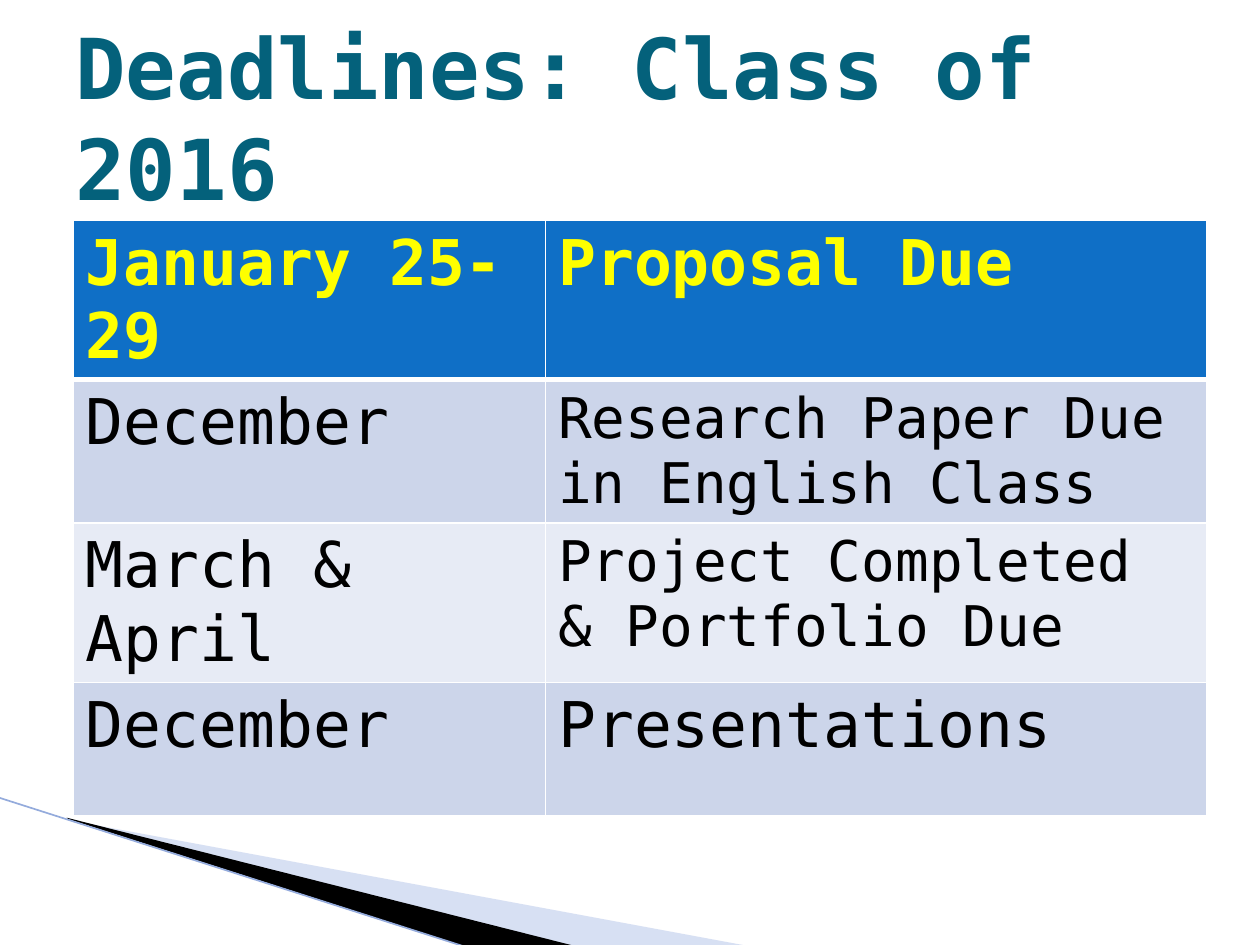
from typing import NamedTuple

from lxml import etree
from pptx import Presentation
from pptx import util as u
from pptx.dml.color import RGBColor
from pptx.enum import shapes, text
from pptx.oxml import ns

FONT = "DejaVu Sans Mono"
WHITE = RGBColor(0xFF, 0xFF, 0xFF)
BLACK = RGBColor(0x00, 0x00, 0x00)
YELLOW = RGBColor(0xFF, 0xFF, 0x00)
TEAL = RGBColor(0x04, 0x61, 0x7B)
HEADER_BLUE = RGBColor(0x0F, 0x6F, 0xC6)
BAND_DARK = RGBColor(0xCC, 0xD5, 0xEA)
BAND_LIGHT = RGBColor(0xE7, 0xEB, 0xF5)
WEDGE_BLUE = RGBColor(0x9D, 0xB2, 0xE1)
LINE_BLUE = RGBColor(0x94, 0xAB, 0xDC)


class Wedge(NamedTuple):
    points: list[tuple[float, float]]
    color: RGBColor
    opacity: int


class Deadline(NamedTuple):
    date: str
    task: str
    task_size: int = 36


WEDGES = [
    Wedge([(0.55, 6.51), (5.95, 7.51), (4.56, 7.51), (0.55, 6.5)], WEDGE_BLUE, 40),
    Wedge([(0.53, 6.49), (4.57, 7.51), (3.72, 7.52), (0.54, 6.5)], BLACK, 100),
]
DEADLINES = [
    Deadline("January 25-29", "Proposal Due"),
    Deadline("December", "Research Paper Due in English Class", 32),
    Deadline("March & April", "Project Completed & Portfolio Due", 32),
    Deadline("December", "Presentations"),
]
COLUMN_WIDTHS = (3.75, 5.25)
ROW_HEIGHT = 1.06


def style_text(text_frame, size: int, color: RGBColor, bold: bool) -> None:
    for run in text_frame.paragraphs[0].runs:
        run.font.name = FONT
        run.font.size = u.Pt(size)
        run.font.bold = bold
        run.font.color.rgb = color


def add_wedge(slide, wedge: Wedge) -> None:
    points = [(u.Inches(x), u.Inches(y)) for x, y in wedge.points]
    builder = slide.shapes.build_freeform(*points[0], scale=1.0)
    builder.add_line_segments(points[1:], close=True)
    shape = builder.convert_to_shape()
    shape.shadow.inherit = False
    shape.fill.solid()
    shape.fill.fore_color.rgb = wedge.color
    shape.line.fill.background()
    if wedge.opacity < 100:
        color = shape.fill._xPr.find(".//" + ns.qn("a:srgbClr"))
        etree.SubElement(color, ns.qn("a:alpha"), val=str(wedge.opacity * 1000))


def add_edge_line(slide) -> None:
    line = slide.shapes.add_connector(
        shapes.MSO_CONNECTOR.STRAIGHT,
        u.Inches(-0.01), u.Inches(6.33), u.Inches(3.71), u.Inches(7.52),
    )
    line.line.color.rgb = LINE_BLUE
    line.line.width = u.Pt(0.95)
    etree.SubElement(line._element.spPr, ns.qn("a:effectLst"))


def set_borders(cell, top: int, bottom: int) -> None:
    properties = cell._tc.get_or_add_tcPr()
    for side, width in (("L", 1), ("R", 1), ("T", top), ("B", bottom)):
        border = etree.SubElement(
            properties, ns.qn(f"a:ln{side}"), w=str(u.Pt(width))
        )
        fill = etree.SubElement(border, ns.qn("a:solidFill"))
        etree.SubElement(fill, ns.qn("a:srgbClr"), val=str(WHITE))


def fill_cell(cell, words: str, size: int, row: int) -> None:
    header = row == 0
    set_borders(cell, top=3 if row == 1 else 1, bottom=3 if header else 1)
    cell.fill.solid()
    band = BAND_DARK if row % 2 else BAND_LIGHT
    cell.fill.fore_color.rgb = HEADER_BLUE if header else band
    cell.text_frame.text = words
    style_text(cell.text_frame, size, YELLOW if header else BLACK, header)


def add_deadline_table(slide) -> None:
    table = slide.shapes.add_table(
        len(DEADLINES), len(COLUMN_WIDTHS), u.Inches(0.58), u.Inches(1.75),
        u.Inches(sum(COLUMN_WIDTHS)), u.Inches(ROW_HEIGHT * len(DEADLINES)),
    ).table
    for column, width in zip(table.columns, COLUMN_WIDTHS):
        column.width = u.Inches(width)
    for row, deadline in enumerate(DEADLINES):
        table.rows[row].height = u.Inches(ROW_HEIGHT)
        fill_cell(table.cell(row, 0), deadline.date, 36, row)
        fill_cell(table.cell(row, 1), deadline.task, deadline.task_size, row)


def add_title(slide) -> None:
    title = slide.shapes.add_textbox(
        u.Inches(0.5), u.Inches(0.3), u.Inches(9), u.Inches(1.25)
    )
    text_frame = title.text_frame
    text_frame.word_wrap = True
    text_frame.vertical_anchor = text.MSO_ANCHOR.MIDDLE
    text_frame.text = "Deadlines: Class of 2016"
    style_text(text_frame, 48, TEAL, True)


def main() -> None:
    presentation = Presentation()
    presentation.slide_width = u.Inches(10)
    presentation.slide_height = u.Inches(7.5)
    slide = presentation.slides.add_slide(presentation.slide_layouts[6])

    # Corner decoration
    for wedge in WEDGES:
        add_wedge(slide, wedge)
    add_edge_line(slide)

    # Content
    add_deadline_table(slide)
    add_title(slide)

    presentation.save("out.pptx")


if __name__ == "__main__":
    main()
